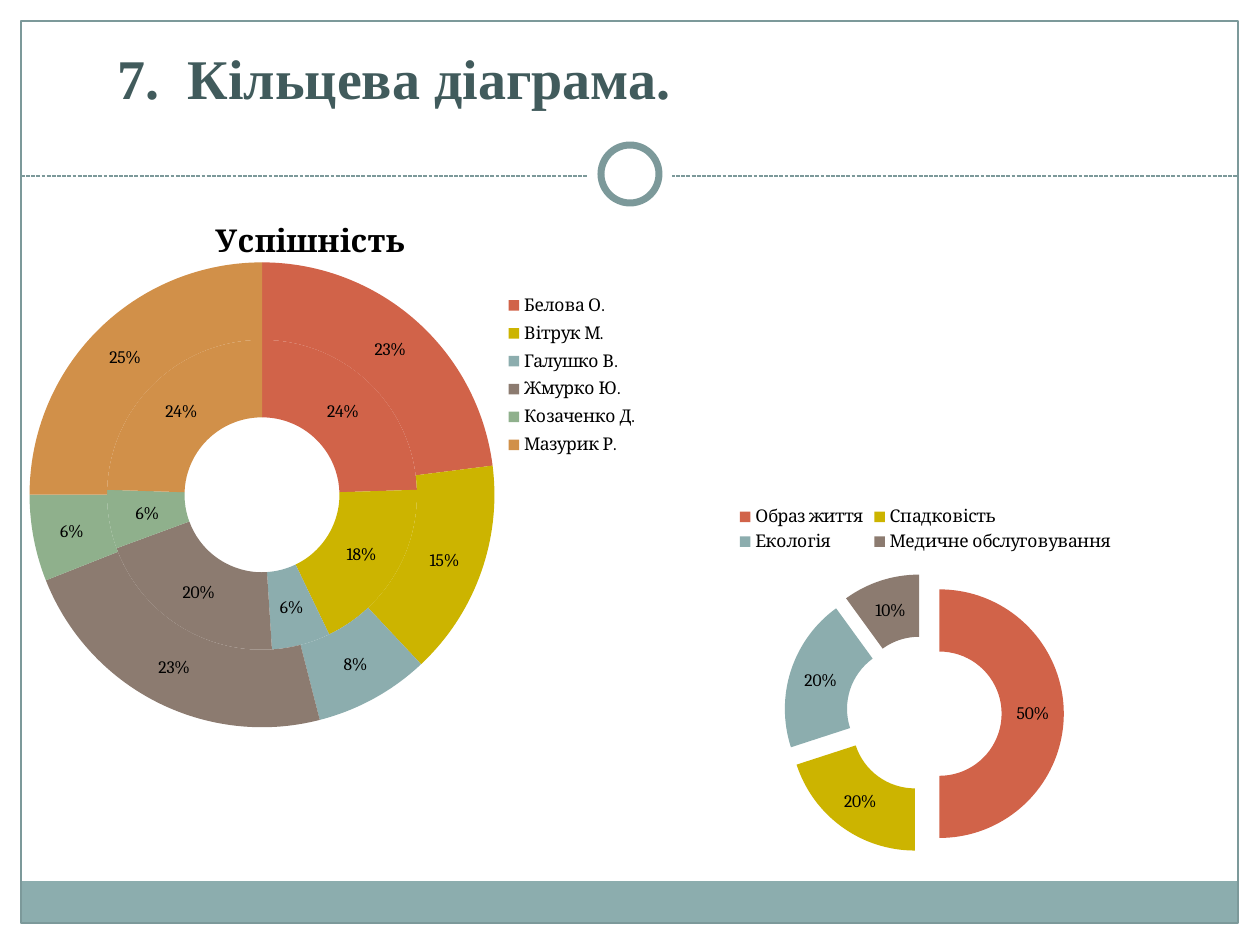
from lxml import etree
from pptx import Presentation
from pptx import util as u
from pptx.chart.data import CategoryChartData
from pptx.dml.color import RGBColor
from pptx.enum import chart as ch, dml, shapes, text
from pptx.oxml import parse_xml
from pptx.oxml.ns import nsdecls, qn

PX = 914400 / 126
WHITE = RGBColor(0xFF, 0xFF, 0xFF)
BLACK = RGBColor(0, 0, 0)
TEAL = RGBColor(0x7C, 0x99, 0x9A)
DARK_TEAL = RGBColor(0x41, 0x5B, 0x5C)
RED = RGBColor(0xD1, 0x63, 0x49)
YELLOW = RGBColor(0xCC, 0xB4, 0x00)
BLUE = RGBColor(0x8C, 0xAD, 0xAE)
BROWN = RGBColor(0x8C, 0x7B, 0x70)
GREEN = RGBColor(0x8F, 0xB0, 0x8C)
ORANGE = RGBColor(0xD1, 0x90, 0x49)
SLICE_COLORS = [RED, YELLOW, BLUE, BROWN, GREEN, ORANGE]


def px(*lengths):
    return [u.Emu(round(length * PX)) for length in lengths]


def set_layout(element, x, y, w, h, inner=False):
    """Place a plot area or legend by fractions of the chart."""
    for old in element.findall(qn("c:layout")):
        element.remove(old)
    target = '<c:layoutTarget val="inner"/>' if inner else ""
    layout = parse_xml(
        f'<c:layout {nsdecls("c")}><c:manualLayout>{target}'
        '<c:xMode val="edge"/><c:yMode val="edge"/>'
        f'<c:x val="{x}"/><c:y val="{y}"/><c:w val="{w}"/><c:h val="{h}"/>'
        '</c:manualLayout></c:layout>')
    position = element.find(qn("c:legendPos"))
    if position is None:
        element.insert(0, layout)
    else:
        position.addnext(layout)


deck = Presentation()
deck.slide_width, deck.slide_height = px(1260, 945)
page = deck.slides.add_slide(deck.slide_layouts[5])

# Frame, footer band, dashed rule and ring
RECT, OVAL = shapes.MSO_SHAPE.RECTANGLE, shapes.MSO_SHAPE.OVAL
decorations = [
    (RECT, (21, 881, 1217, 43), BLUE, None),
    (RECT, (21, 21, 1217, 902), None, 0.75),
    (OVAL, (588, 132, 84, 84), WHITE, None),
    (OVAL, (601, 145, 58, 58), WHITE, 4),
]
for kind, place, fill, line_width in decorations:
    shape = page.shapes.add_shape(kind, *px(*place))
    shape.shadow.inherit = False
    if fill is None:
        shape.fill.background()
    else:
        shape.fill.solid()
        shape.fill.fore_color.rgb = fill
    if line_width is None:
        shape.line.fill.background()
    else:
        shape.line.color.rgb = TEAL
        shape.line.width = u.Pt(line_width)
    if place[1] == 21:
        rule = page.shapes.add_connector(
            shapes.MSO_CONNECTOR.STRAIGHT, *px(21, 176, 1238, 176))
        rule.line.color.rgb = TEAL
        rule.line.width = u.Pt(0.75)
        rule.line.dash_style = dml.MSO_LINE.SQUARE_DOT
        etree.SubElement(rule._element.spPr, qn("a:effectLst"))

# Title
title = page.shapes.title
title.left, title.top, title.width, title.height = px(105, 45, 1071, 113)
frame = title.text_frame
frame.word_wrap = True
frame.auto_size = text.MSO_AUTO_SIZE.NONE
frame.vertical_anchor = text.MSO_ANCHOR.TOP
para = frame.paragraphs[0]
para.alignment = text.PP_ALIGN.LEFT
para.line_spacing = 0.9
para.space_before = u.Pt(6.4)
span = para.add_run()
span.text = "7.  Кільцева діаграма."
span.font.name = "Times New Roman"
span.font.size = u.Pt(32)
span.font.bold = True
span.font.color.rgb = DARK_TEAL

# Doughnut charts
charts = [
    dict(place=(-59, 197, 738, 532), kind=ch.XL_CHART_TYPE.DOUGHNUT,
         title="Успішність", legend=ch.XL_LEGEND_POSITION.RIGHT,
         categories=["Белова О.", "Вітрук М.", "Галушко В.",
                     "Жмурко Ю.", "Козаченко Д.", "Мазурик Р."],
         series=[(24, 18, 6, 20, 6, 24), (23, 15, 8, 23, 6, 25)]),
    dict(place=(610, 493, 630, 378), kind=ch.XL_CHART_TYPE.DOUGHNUT_EXPLODED,
         title=None, legend=ch.XL_LEGEND_POSITION.TOP,
         categories=["Образ життя", "Спадковість", "Екологія",
                     "Медичне обслуговування"],
         series=[(50, 20, 20, 10)]),
]
for item in charts:
    data = CategoryChartData()
    data.categories = item["categories"]
    for number, values in enumerate(item["series"], 1):
        data.add_series(f"Series {number}", values)
    chart = page.shapes.add_chart(item["kind"], *px(*item["place"]), data).chart
    chart.font.name = "Cambria"
    chart.font.size = u.Pt(10)
    chart.font.color.rgb = BLACK
    chart.has_legend = True
    chart.legend.position = item["legend"]
    chart.legend.include_in_layout = False
    chart.has_title = item["title"] is not None
    if chart.has_title:
        span = chart.chart_title.text_frame.paragraphs[0].add_run()
        span.text = item["title"]
        span.font.name = "Cambria"
        span.font.size = u.Pt(18)
        span.font.bold = True
        span.font.color.rgb = BLACK
        set_layout(chart._chartSpace.chart.plotArea, 0.12, 0.12, 0.63, 0.88, inner=True)
        set_layout(chart.legend._element, 0.76, 0.17, 0.19, 0.33)
    plot = chart.plots[0]
    plot.vary_by_categories = True
    for series in plot.series:
        for index, color in enumerate(SLICE_COLORS[:len(item["categories"])]):
            slice_format = series.points[index].format
            slice_format.fill.solid()
            slice_format.fill.fore_color.rgb = color
            slice_format.line.fill.background()
        labels = series.data_labels
        labels.show_value = False
        labels.show_percentage = True
        labels.number_format = "0%"
        labels.number_format_is_linked = False

deck.save("out.pptx")
